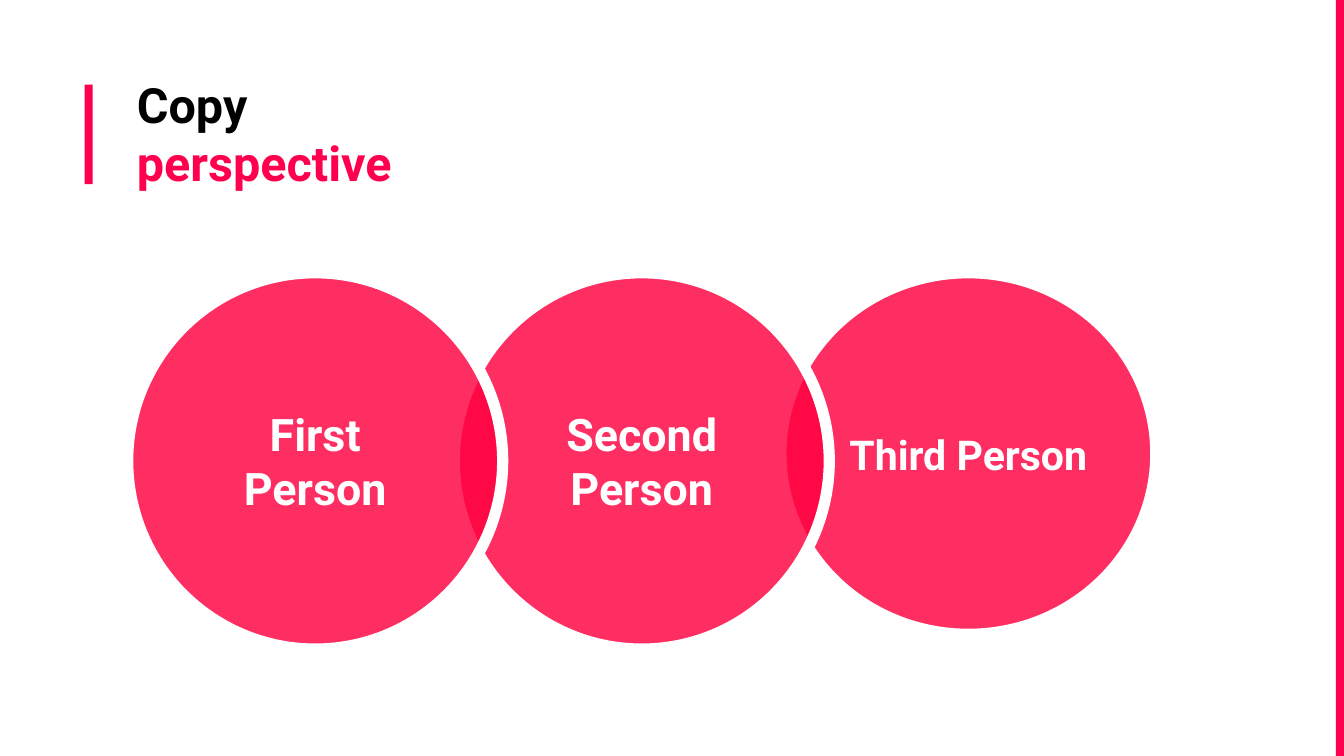
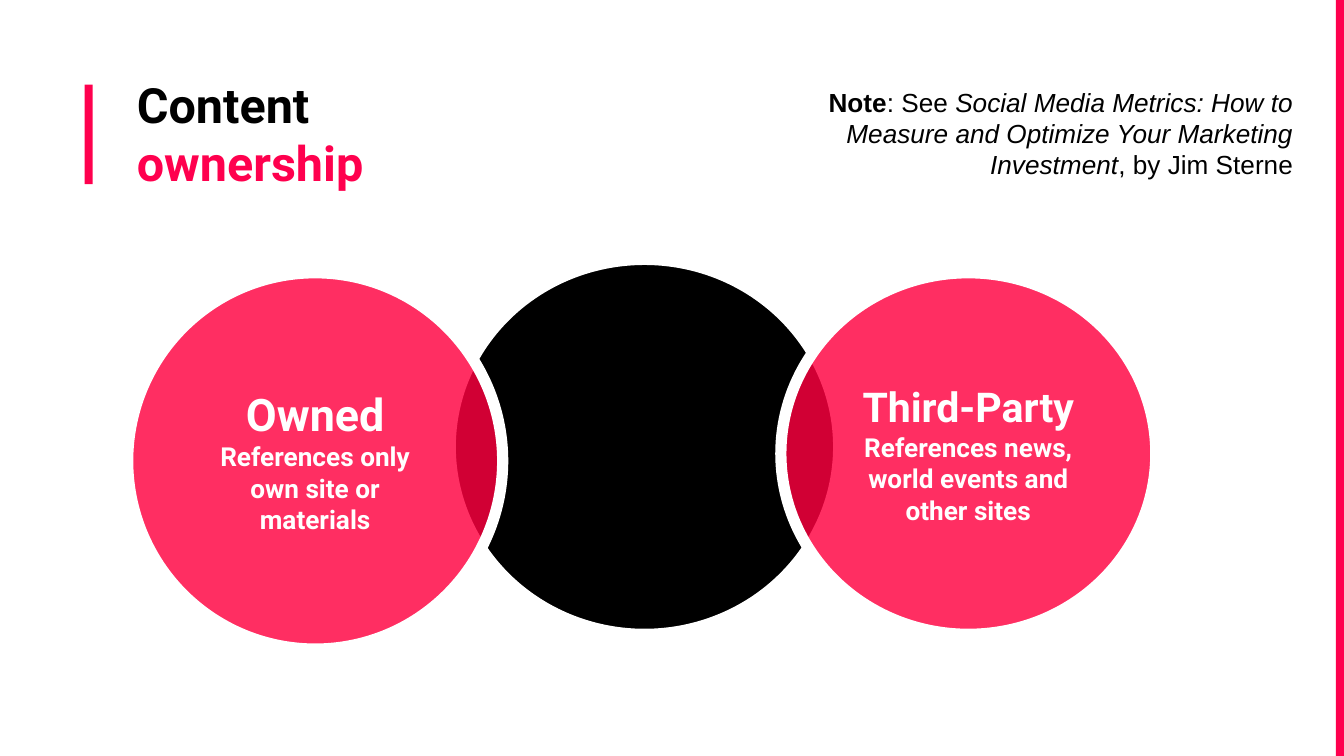
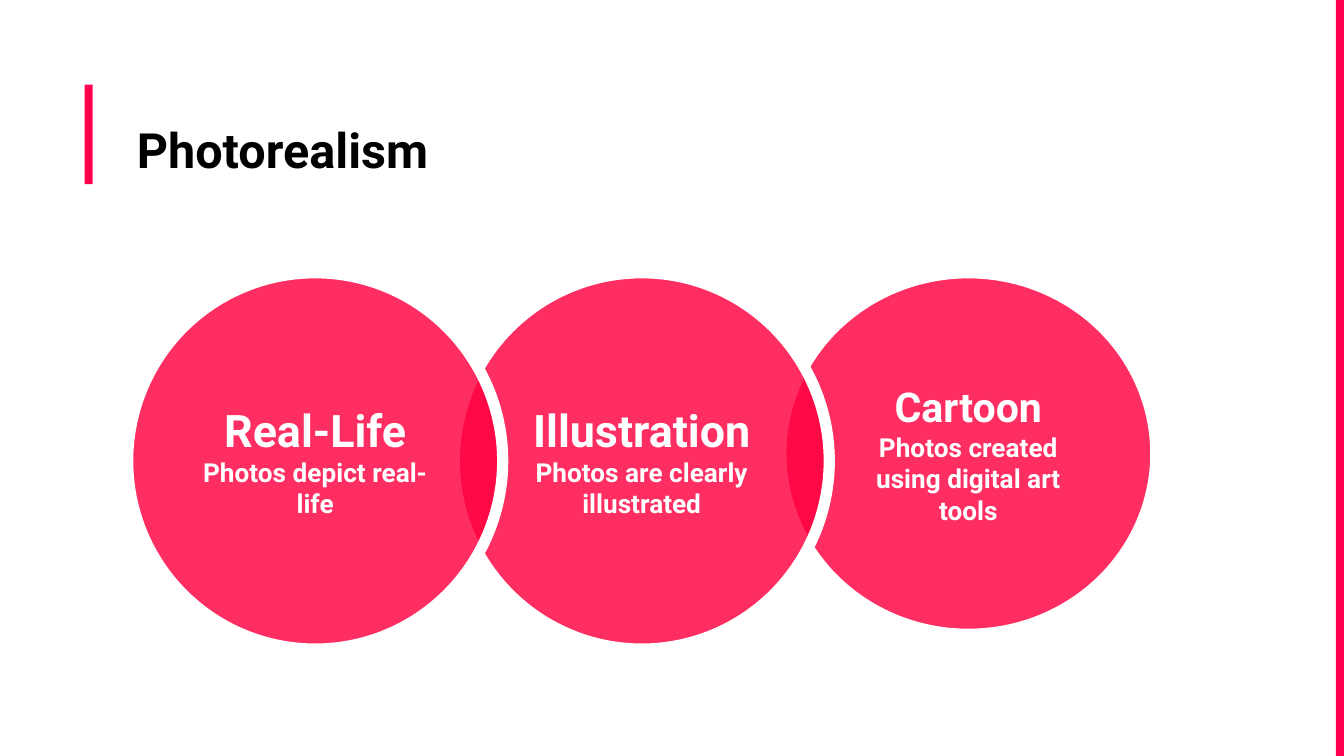
from dataclasses import dataclass
from typing import NamedTuple

from lxml import etree
from pptx import Presentation
from pptx.dml.color import RGBColor
from pptx.enum.shapes import MSO_SHAPE
from pptx.enum.text import MSO_ANCHOR, MSO_AUTO_SIZE, PP_ALIGN
from pptx.oxml.ns import qn
from pptx.util import Inches, Pt

RECTANGLE, OVAL = MSO_SHAPE.RECTANGLE, MSO_SHAPE.OVAL
MIDDLE = MSO_ANCHOR.MIDDLE
GROW = MSO_AUTO_SIZE.SHAPE_TO_FIT_TEXT
LEFT, CENTER, RIGHT = PP_ALIGN.LEFT, PP_ALIGN.CENTER, PP_ALIGN.RIGHT

ACCENT = RGBColor(0xFF, 0x00, 0x4E)
ROSE = RGBColor(0xFF, 0x00, 0x40)
BLACK = RGBColor(0x00, 0x00, 0x00)
WHITE = RGBColor(0xFF, 0xFF, 0xFF)

HEADING_FONT, NOTE_FONT = "Roboto", "Arial"
TITLE_SIZE, DETAIL_SIZE = 26, 14
ROSE_OPACITY = 82
OUTLINE_WIDTH = 6

SLIDE_WIDTH = Inches(10)
SLIDE_HEIGHT = SLIDE_WIDTH * 9 // 16
GRID_COLUMNS = 100
GRID_ROWS = 56.25


class Area(NamedTuple):
    column: float
    row: float
    columns: float
    rows: float

    def emu(self) -> tuple[int, int, int, int]:
        return (
            round(SLIDE_WIDTH * self.column / GRID_COLUMNS),
            round(SLIDE_HEIGHT * self.row / GRID_ROWS),
            round(SLIDE_WIDTH * self.columns / GRID_COLUMNS),
            round(SLIDE_HEIGHT * self.rows / GRID_ROWS),
        )


class Piece(NamedTuple):
    text: str
    size: float
    color: RGBColor
    font: str = HEADING_FONT
    bold: bool = True
    italic: bool = False


class Place(NamedTuple):
    area: Area
    heading_size: float


@dataclass(frozen=True)
class Circle:
    place: Place
    heading: str = ""
    detail: str = ""
    color: RGBColor = ROSE
    opacity: int = ROSE_OPACITY


@dataclass(frozen=True)
class Topic:
    first_line: str
    second_line: str
    circles: tuple[Circle, ...]
    note: tuple[Piece, ...] = ()


TITLE_MARK = Area(6.3, 6.3, 0.6, 7.4)
EDGE_BAND = Area(99.4, 0, 0.6, GRID_ROWS)
TITLE_AREA = Area(9.2, 4.6, 35.3, 9.4)
TITLE_LINE_ROWS = 4.33
NOTE_AREA = Area(58.9, 5.9, 38.3, 8.1)

CIRCLE_STEP = 24.3
FIRST, SECOND, THIRD = (
    Place(Area(9.5 + CIRCLE_STEP * index, 20.3, 27.9, rows), size)
    for index, (rows, size) in enumerate([(28, 24), (28, 24), (26.9, 22)])
)
CENTER_DISC = Place(Area(33.5, 19.3, 28.9, 27.9), 24)

TOPICS = (
    Topic(
        "Copy ",
        "perspective",
        (
            Circle(THIRD, "Third Person"),
            Circle(SECOND, "Second Person"),
            Circle(FIRST, "First Person"),
        ),
    ),
    Topic(
        "Content ",
        "ownership",
        (
            Circle(CENTER_DISC, color=BLACK, opacity=100),
            Circle(FIRST, "Owned", "References only own site or materials"),
            Circle(THIRD, "Third-Party", "References news, world events and other sites"),
        ),
        (
            Piece("Note", DETAIL_SIZE, BLACK, NOTE_FONT),
            Piece(": See ", DETAIL_SIZE, BLACK, NOTE_FONT, False),
            Piece(
                "Social Media Metrics: How to Measure and Optimize Your Marketing Investment",
                DETAIL_SIZE, BLACK, NOTE_FONT, False, True,
            ),
            Piece(", by Jim Sterne", DETAIL_SIZE, BLACK, NOTE_FONT, False),
        ),
    ),
    Topic(
        "",
        "Photorealism",
        (
            Circle(THIRD, "Cartoon", "Photos created using digital art tools"),
            Circle(SECOND, "Illustration", "Photos are clearly illustrated"),
            Circle(FIRST, "Real-Life", "Photos depict real-life"),
        ),
    ),
)


def add_piece(paragraph, piece: Piece) -> None:
    run = paragraph.add_run()
    run.text = piece.text
    run.font.name = piece.font
    run.font.size = Pt(piece.size)
    run.font.bold = piece.bold
    run.font.italic = piece.italic
    run.font.color.rgb = piece.color


def set_margins(frame, margin) -> None:
    frame.margin_left = frame.margin_right = margin
    frame.margin_top = frame.margin_bottom = margin


def draw_shape(slide, kind, area: Area, color: RGBColor):
    shape = slide.shapes.add_shape(kind, *area.emu())
    shape.shadow.inherit = False
    shape.fill.solid()
    shape.fill.fore_color.rgb = color
    shape.line.fill.background()
    return shape


def set_opacity(shape, percent: int) -> None:
    color = shape.fill._xPr.find(qn("a:solidFill"))[0]
    etree.SubElement(color, qn("a:alpha")).set("val", str(percent * 1000))


def draw_circle(slide, circle: Circle) -> None:
    disc = draw_shape(slide, OVAL, circle.place.area, circle.color)
    if circle.opacity < 100:
        set_opacity(disc, circle.opacity)
    disc.line.color.rgb = WHITE
    disc.line.width = Pt(OUTLINE_WIDTH)
    frame = disc.text_frame
    frame.word_wrap = True
    frame.vertical_anchor = MIDDLE
    set_margins(frame, Inches(0.1))
    lines = ((circle.heading, circle.place.heading_size), (circle.detail, DETAIL_SIZE))
    for index, (text, size) in enumerate(lines):
        if text:
            paragraph = frame.add_paragraph() if index else frame.paragraphs[0]
            paragraph.alignment = CENTER
            add_piece(paragraph, Piece(text, size, WHITE))


def draw_title(slide, topic: Topic) -> None:
    frame = slide.shapes.add_textbox(*TITLE_AREA.emu()).text_frame
    frame.word_wrap = True
    set_margins(frame, Inches(0.1))
    paragraph = frame.paragraphs[0]
    paragraph.alignment = LEFT
    if topic.first_line:
        add_piece(paragraph, Piece(topic.first_line, TITLE_SIZE, BLACK))
        paragraph.add_line_break()
        add_piece(paragraph, Piece(topic.second_line, TITLE_SIZE, ACCENT))
    else:
        frame.margin_top += round(SLIDE_HEIGHT * TITLE_LINE_ROWS / GRID_ROWS)
        add_piece(paragraph, Piece(topic.second_line, TITLE_SIZE, BLACK))


def draw_note(slide, pieces: tuple[Piece, ...]) -> None:
    frame = slide.shapes.add_textbox(*NOTE_AREA.emu()).text_frame
    frame.word_wrap = True
    frame.auto_size = GROW
    paragraph = frame.paragraphs[0]
    paragraph.alignment = RIGHT
    for piece in pieces:
        add_piece(paragraph, piece)


def draw_topic(slide, topic: Topic) -> None:
    for bar in (TITLE_MARK, EDGE_BAND):
        draw_shape(slide, RECTANGLE, bar, ACCENT)
    draw_title(slide, topic)
    for circle in topic.circles:
        draw_circle(slide, circle)
    if topic.note:
        draw_note(slide, topic.note)


def main() -> None:
    deck = Presentation()
    deck.slide_width = SLIDE_WIDTH
    deck.slide_height = SLIDE_HEIGHT
    blank = deck.slide_layouts[6]
    for topic in TOPICS:
        draw_topic(deck.slides.add_slide(blank), topic)
    deck.save("out.pptx")


if __name__ == "__main__":
    main()
